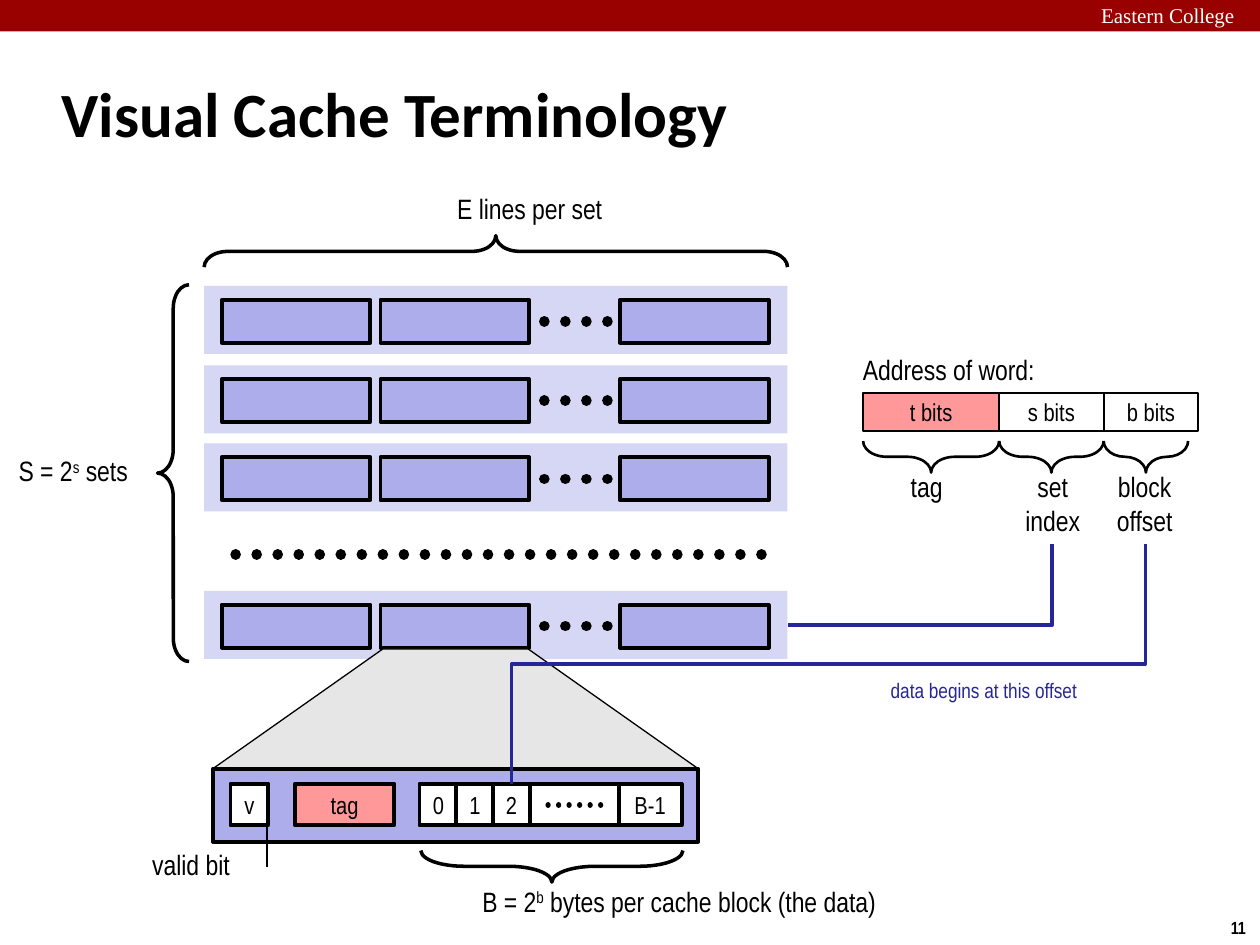
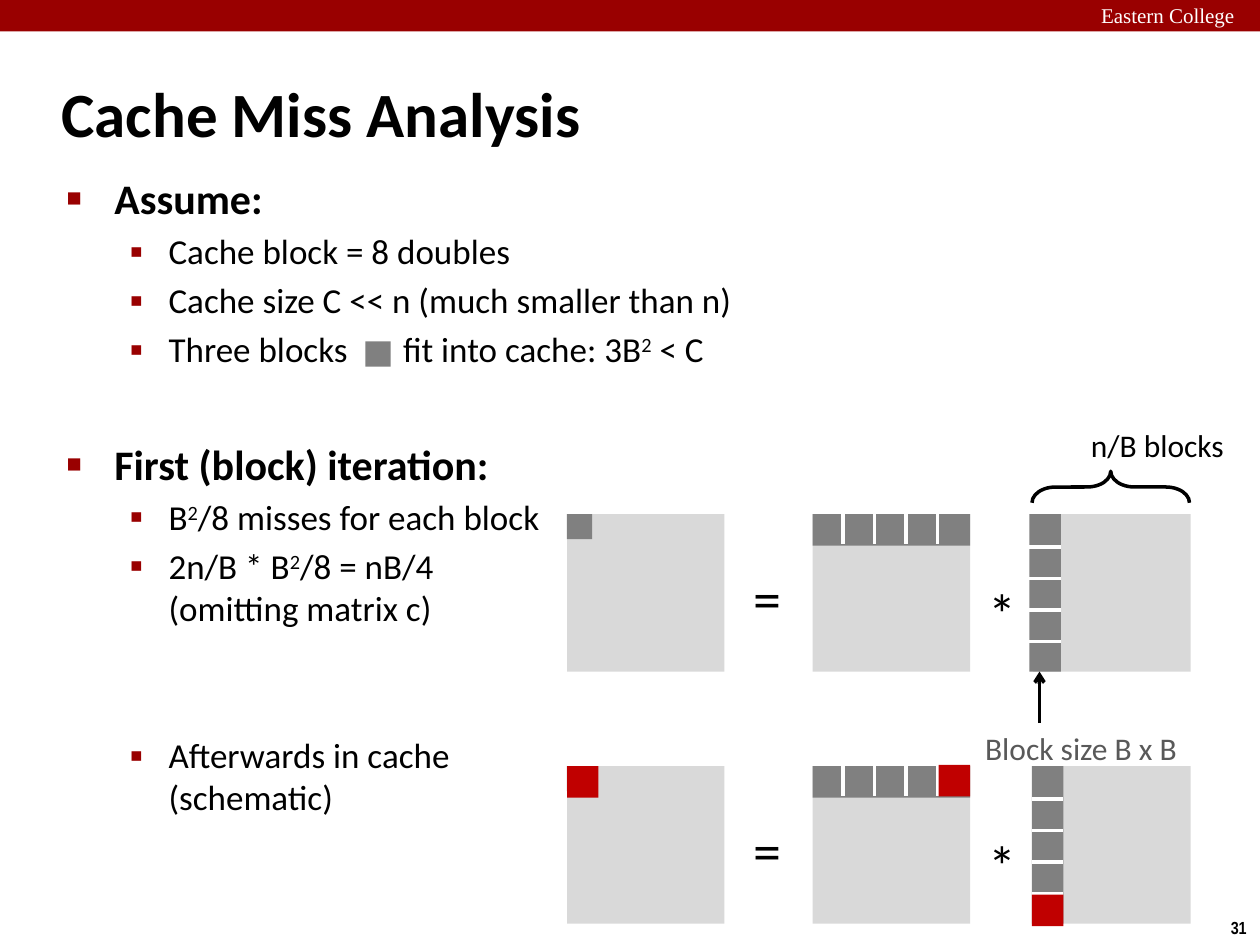
from lxml import etree
from pptx import Presentation
from pptx.dml.color import RGBColor
from pptx.enum.dml import MSO_LINE
from pptx.enum.shapes import MSO_CONNECTOR, MSO_SHAPE
from pptx.enum.text import MSO_ANCHOR, PP_ALIGN
from pptx.oxml.ns import qn
from pptx.util import Inches, Pt

BLACK, WHITE, CRIMSON = "000000", "FFFFFF", "990000"
SET_FILL, LINE_FILL, TAG_FILL = "D6D6F5", "ADADEB", "FF9999"
ZOOM_FILL, NAVY = "E6E6E6", "262699"
MATRIX, BLOCK, CACHED, CAPTION = "D9D9D9", "808080", "C00000", "595959"
NARROW, SANS, SERIF = "Arial Narrow", "Calibri", "Times New Roman"


def rgb(color):
    return RGBColor.from_string(color)


def add_xml(parent, tag, **attrs):
    return etree.SubElement(parent, qn(tag), attrs)


class Deck:
    """Holds the shared style and the current slide."""

    def __init__(self):
        self.prs = Presentation()
        self.prs.slide_width, self.prs.slide_height = Inches(10), Inches(7.5)
        self.s = None

    def new_slide(self, title, number):
        self.s = self.prs.slides.add_slide(self.prs.slide_layouts[6])
        self.box(0, 0, 10, 0.25, CRIMSON)
        self.label(8.64, -0.03, 1.43, 0.3, "Eastern College", 12, WHITE, SERIF)
        self.label(9.67, 7.23, 0.4, 0.27, number, 10, bold=True)
        self.label(0.39, 0.48, 8.3, 0.83, title, 36, font=SANS, bold=True,
                   anchor=MSO_ANCHOR.MIDDLE)

    def fill_text(self, p, text, size, color=BLACK, font=NARROW, bold=False):
        """Fill a paragraph; ^x^ raises x, ^ ^ is a wide gap, \\v breaks the line."""
        for i, piece in enumerate(text.split("^")):
            for j, part in enumerate(piece.split("\v")):
                if j:
                    p.add_line_break()
                r = p.add_run()
                r.text = part
                r.font.name, r.font.size, r.font.bold = font, Pt(size), bold
                r.font.color.rgb = rgb(color)
                if i % 2:
                    key, value = ("spc", "2700") if part == " " else ("baseline", "30000")
                    r._r.get_or_add_rPr().set(key, value)

    def label(self, x, y, w, h, text, size=16, color=BLACK, font=NARROW,
              bold=False, align=PP_ALIGN.LEFT, anchor=MSO_ANCHOR.TOP):
        tf = self.s.shapes.add_textbox(Inches(x), Inches(y), Inches(w), Inches(h)).text_frame
        tf.word_wrap, tf.vertical_anchor = True, anchor
        for i, line in enumerate(text.split("\n")):
            p = tf.add_paragraph() if i else tf.paragraphs[0]
            p.alignment = align
            self.fill_text(p, line, size, color, font, bold)

    def bullets(self, x, y, w, h, items):
        """Each item is (level, space before in points, text)."""
        tf = self.s.shapes.add_textbox(Inches(x), Inches(y), Inches(w), Inches(h)).text_frame
        tf.word_wrap = True
        styles = [(24, True, 0.38, 0.38, "■", "60000"),
                  (20, False, 0.81, 0.31, "▪", "110000")]
        for i, (level, space, text) in enumerate(items):
            size, bold, margin, hang, mark, scale = styles[level]
            p = tf.add_paragraph() if i else tf.paragraphs[0]
            p.level, p.space_before = level, Pt(space)
            pPr = p._p.get_or_add_pPr()
            pPr.set("marL", str(Inches(margin)))
            pPr.set("indent", str(-Inches(hang)))
            add_xml(add_xml(pPr, "a:buClr"), "a:srgbClr", val=CRIMSON)
            add_xml(pPr, "a:buSzPct", val=scale)
            add_xml(pPr, "a:buFont", typeface="Arial")
            add_xml(pPr, "a:buChar", char=mark)
            self.fill_text(p, text, size, font=SANS, bold=bold)

    def box(self, x, y, w, h, fill=None, line=0, text="", kind=MSO_SHAPE.RECTANGLE):
        sp = self.s.shapes.add_shape(kind, Inches(x), Inches(y), Inches(w), Inches(h))
        sp.shadow.inherit = False
        if fill:
            sp.fill.solid()
            sp.fill.fore_color.rgb = rgb(fill)
        else:
            sp.fill.background()
        if line:
            sp.line.color.rgb, sp.line.width = rgb(BLACK), Pt(line)
        else:
            sp.line.fill.background()
        if text:
            tf = sp.text_frame
            tf.margin_left = tf.margin_right = 0
            tf.vertical_anchor = MSO_ANCHOR.MIDDLE
            tf.paragraphs[0].alignment = PP_ALIGN.CENTER
            self.fill_text(tf.paragraphs[0], text, 14)
        return sp

    def brace(self, x, y, w, h, turn=0, line=2, curve=0.75):
        """Brace that fills x, y, w, h; turn 90 points up, 270 points down."""
        if turn:
            x, y, w, h = x + (w - h) / 2, y + (h - w) / 2, h, w
        sp = self.box(x, y, w, h, line=line, kind=MSO_SHAPE.LEFT_BRACE)
        sp.rotation, sp.adjustments[0] = turn, curve

    def line(self, x1, y1, x2, y2, color=BLACK, width=2, dotted=False,
             arrow=False, kind=MSO_CONNECTOR.STRAIGHT):
        c = self.s.shapes.add_connector(kind, Inches(x1), Inches(y1), Inches(x2), Inches(y2))
        c.line.color.rgb, c.line.width = rgb(color), Pt(width)
        ln = c.line._get_or_add_ln()
        if dotted:
            c.line.dash_style = MSO_LINE.ROUND_DOT
            ln.set("cap", "rnd")
        if arrow:
            add_xml(ln, "a:tailEnd", type="arrow")
        add_xml(c._element.spPr, "a:effectLst")
        return c

    def elbow(self, x1, y1, x2, y2, preset):
        """Elbow that leaves downwards and runs to the left."""
        down, left = y2 - y1, x1 - x2
        x, y = (x1 + x2 - down) / 2, (y1 + y2 - left) / 2
        c = self.line(x, y, x + down, y + left, NAVY, kind=MSO_CONNECTOR.ELBOW)
        c._element.spPr.xfrm.set("rot", "5400000")
        c._element.spPr.prstGeom.set("prst", preset)


def cache_set(deck, top):
    deck.box(1.62, top, 4.63, 0.54, SET_FILL)
    for x in (1.76, 3.02, 4.92):
        last = deck.box(x, top + 0.11, 1.18, 0.34, LINE_FILL, 2.25)
    dots = deck.line(4.32, top + 0.28, 4.92, top + 0.28, width=6, dotted=True)
    dots.end_connect(last, 1)


def terminology(deck):
    deck.new_slide("Visual Cache Terminology", "11")

    # Sets and their lines
    deck.brace(1.62, 1.87, 4.63, 0.25, 90)
    deck.brace(1.25, 2.26, 0.25, 2.99)
    deck.label(3.53, 1.47, 1.75, 0.37, "E lines per set")
    deck.label(0.05, 3.55, 1.27, 0.37, "S = 2^s^ sets")
    for top in (2.27, 2.9, 3.52, 4.69):
        cache_set(deck, top)
    deck.line(1.87, 4.4, 6.1, 4.4, width=6, dotted=True)

    # One line enlarged
    zoom = deck.box(1.69, 5.15, 3.85, 0.95, ZOOM_FILL, 0.75, kind=MSO_SHAPE.TRAPEZOID)
    zoom.adjustments[0] = 1.42
    deck.box(1.69, 6.1, 3.85, 0.58, LINE_FILL, 2.25)
    for x, w, fill, text in [(3.33, 0.3, WHITE, "0"), (3.62, 0.3, WHITE, "1"),
                             (3.91, 0.3, WHITE, "2"), (4.91, 0.5, WHITE, "B-1"),
                             (4.21, 0.7, WHITE, ""), (2.34, 0.79, TAG_FILL, "tag"),
                             (1.83, 0.3, WHITE, "v")]:
        deck.box(x, 6.22, w, 0.33, fill, 2.25, text)
    deck.line(4.35, 6.39, 4.85, 6.39, width=3, dotted=True)
    deck.label(1.11, 6.68, 1.06, 0.37, "valid bit")
    deck.line(2.12, 6.88, 2.12, 6.55, width=0.75)
    deck.brace(3.34, 6.75, 2.08, 0.25, 270, curve=1.37)
    deck.label(3.73, 6.97, 4.17, 0.37, "B = 2^b^ bytes per cache block (the data)")

    # Address fields: left, width, brace width, fill, text
    deck.label(6.75, 2.75, 1.94, 0.37, "Address of word:")
    for x, w, span, fill, text in [(6.85, 1.08, 1.08, TAG_FILL, "t bits"),
                                   (7.93, 0.83, 0.83, WHITE, "s bits"),
                                   (8.76, 0.75, 0.67, WHITE, "b bits")]:
        deck.box(x, 3.12, w, 0.3, fill, 1, text)
        deck.brace(x, 3.5, span, 0.25, 270, 1.5)
    deck.label(7.13, 3.68, 0.54, 0.37, "tag")
    for x, text in [(7.97, "set\nindex"), (8.7, "block\noffset")]:
        deck.label(x, 3.68, 0.77, 0.64, text, align=PP_ALIGN.CENTER)

    # From address fields to the cache
    deck.elbow(8.35, 4.32, 6.25, 4.96, "bentConnector2")
    deck.elbow(9.09, 4.32, 4.06, 6.22, "bentConnector3")
    deck.label(6.97, 5.33, 2.12, 0.3, "data begins at this offset", 12, NAVY)


def product(deck, top, column):
    """Matrices c = a * b with a row and a column of blocks."""
    for x in (4.5, 6.45, 8.2):
        deck.box(x, top, 1.25, 1.25, MATRIX)
    deck.label(7.75, top + 0.46, 0.43, 0.64, "*", 32, font=SANS)
    deck.label(5.88, top + 0.34, 0.43, 0.64, "=", 32, font=SANS)
    deck.box(4.5, top, 0.2, 0.2, BLOCK)
    deck.box(6.45, top, 1.25, 0.25, BLOCK)
    deck.box(column, top, 0.25, 1.25, BLOCK)
    for i in range(1, 5):
        x, y = 6.44 + 0.25 * i, top + 0.01 + 0.25 * i
        deck.line(x, top - 0.01, x, top + 0.24, WHITE)
        deck.line(column, y, column + 0.25, y, WHITE)


def miss_analysis(deck):
    deck.new_slide("Cache Miss Analysis", "31")
    deck.bullets(0.43, 1.32, 8.64, 5.4, [
        (0, 4.8, "Assume:"),
        (1, 4, "Cache block = 8 doubles"),
        (1, 4, "Cache size C << n (much smaller than n)"),
        (1, 4, "Three blocks^ ^fit into cache: 3B^2^ < C"),
        (0, 39, "First (block) iteration:"),
        (1, 4, "B^2^/8 misses for each block"),
        (1, 4, "2n/B * B^2^/8 = nB/4\v(omitting matrix c)"),
        (1, 60, "Afterwards in cache\v(schematic)"),
    ])
    deck.box(2.9, 2.71, 0.2, 0.2, BLOCK)

    # First iteration, then the blocks left in cache
    product(deck, 4.08, 8.17)
    product(deck, 6.08, 8.19)
    for x, y in [(4.5, 6.08), (7.45, 6.07), (8.19, 7.1)]:
        deck.box(x, y, 0.25, 0.25, CACHED)

    # Captions
    deck.label(7.72, 5.74, 1.78, 0.4, "Block size B x B", 18, CAPTION, SANS)
    deck.line(8.25, 5.74, 8.25, 5.33, arrow=True)
    deck.brace(8.19, 3.74, 1.25, 0.25, 90)
    deck.label(8.56, 3.33, 1.3, 0.4, "n/B blocks", 18, font=SANS)


def main():
    deck = Deck()
    terminology(deck)
    miss_analysis(deck)
    deck.prs.save("out.pptx")


if __name__ == "__main__":
    main()
